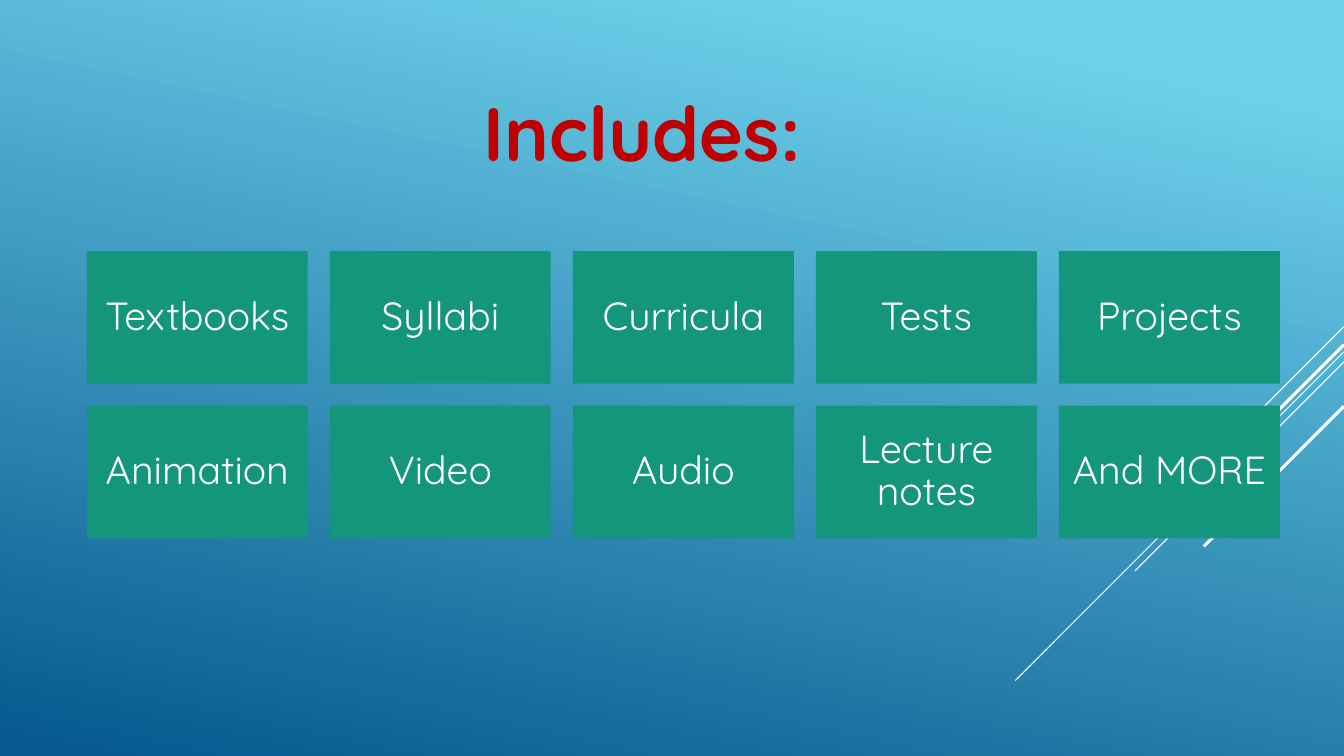
from lxml.etree import SubElement
from pptx import Presentation
from pptx.dml.color import RGBColor
from pptx.enum.shapes import MSO_CONNECTOR, MSO_SHAPE
from pptx.enum.text import MSO_ANCHOR, MSO_AUTO_SIZE, PP_ALIGN
from pptx.oxml.ns import qn
from pptx.util import Pt


def color(hex_value):
    return RGBColor.from_string(hex_value)


def apply_format(target, values):
    for attribute, value in values.items():
        setattr(target, attribute, value)


SLIDE_WIDTH, SLIDE_HEIGHT = 960, 540
WHITE, GREEN, RED = "FFFFFF", "14967C", "C00000"
BACKDROP = [(0.1, "6ED2EB"), (1, "06588E")]
RAYS = [
    (233.3, 72, 0.75),
    (251.3, 234.7, 0.75),
    (258.5, 149.3, 0.75),
    (246.2, 137.5, 2.25),
    (290.2, 100.1, 2.25),
]
MATERIALS = [
    ["Textbooks", "Syllabi", "Curricula", "Tests", "Projects"],
    ["Animation", "Video", "Audio", "Lecture notes", "And MORE"],
]
GRID_LEFT, GRID_TOP = 62, 179.3
CARD_WIDTH, CARD_HEIGHT, GAP = 157.8, 94.7, 15.8

HEADING_PLACE = {"left": Pt(332), "top": Pt(57.6), "width": Pt(253.4), "height": Pt(72.7)}
HEADING_FRAME = {
    "word_wrap": False,
    "auto_size": MSO_AUTO_SIZE.SHAPE_TO_FIT_TEXT,
    "vertical_anchor": MSO_ANCHOR.TOP,
}
HEADING_FONT = {"name": "Quicksand", "size": Pt(54), "bold": True}
CARD_FRAME = {
    "word_wrap": True,
    "vertical_anchor": MSO_ANCHOR.MIDDLE,
    "margin_left": Pt(8.4),
    "margin_right": Pt(8.4),
    "margin_top": Pt(8.4),
    "margin_bottom": Pt(8.4),
}
CARD_PARAGRAPH = {"alignment": PP_ALIGN.CENTER, "line_spacing": 0.9}
CARD_FONT = {"name": "Quicksand", "size": Pt(28)}

presentation = Presentation()
apply_format(presentation, {"slide_width": Pt(SLIDE_WIDTH), "slide_height": Pt(SLIDE_HEIGHT)})
slide = presentation.slides.add_slide(presentation.slide_layouts[5])

backdrop = slide.background.fill
backdrop.gradient()
backdrop.gradient_angle = 258
for stop, (position, shade) in zip(backdrop.gradient_stops, BACKDROP):
    stop.position = position
    stop.color.rgb = color(shade)

for top, reach, weight in RAYS:
    ray = slide.shapes.add_connector(
        MSO_CONNECTOR.STRAIGHT,
        Pt(SLIDE_WIDTH), Pt(top), Pt(SLIDE_WIDTH - reach), Pt(top + reach),
    )
    ray.line.width = Pt(weight)
    ray.line.color.rgb = color(WHITE)
    SubElement(ray._element.spPr, qn("a:effectLst"))

for row, materials in enumerate(MATERIALS):
    for column, material in enumerate(materials):
        card = slide.shapes.add_shape(
            MSO_SHAPE.RECTANGLE,
            Pt(GRID_LEFT + column * (CARD_WIDTH + GAP)),
            Pt(GRID_TOP + row * (CARD_HEIGHT + GAP)),
            Pt(CARD_WIDTH),
            Pt(CARD_HEIGHT),
        )
        card.shadow.inherit = False
        card.fill.solid()
        card.fill.fore_color.rgb = color(GREEN)
        card.line.fill.background()
        card.text_frame.text = material
        label = card.text_frame.paragraphs[0]
        apply_format(card.text_frame, CARD_FRAME)
        apply_format(label, CARD_PARAGRAPH)
        apply_format(label.runs[0].font, CARD_FONT)
        label.runs[0].font.color.rgb = color(WHITE)

heading = slide.shapes.title
apply_format(heading, HEADING_PLACE)
heading.text_frame.text = "Includes:"
apply_format(heading.text_frame, HEADING_FRAME)
heading_line = heading.text_frame.paragraphs[0]
heading_line.alignment = PP_ALIGN.CENTER
apply_format(heading_line.runs[0].font, HEADING_FONT)
heading_line.runs[0].font.color.rgb = color(RED)

presentation.save("out.pptx")
